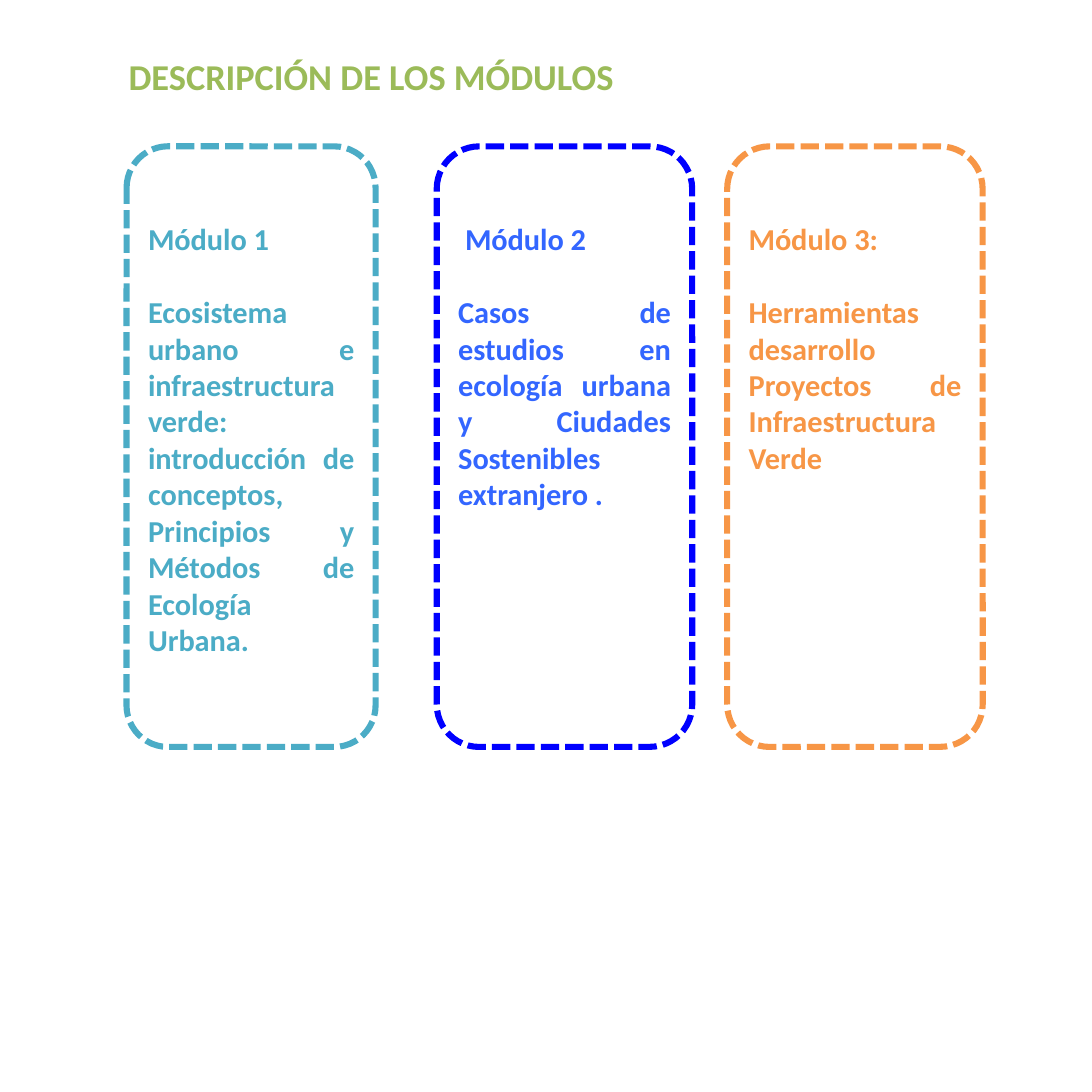
from pptx import Presentation
from pptx.dml.color import RGBColor
from pptx.enum.dml import MSO_LINE
from pptx.enum.shapes import MSO_SHAPE as Preset
from pptx.enum.text import PP_ALIGN as Align
from pptx.util import Inches, Pt


def color(value):
    return RGBColor.from_string(value)


class ModuleSlide:
    """Holds the style and the current slide."""
    font = "Calibri"
    line_width = 2

    def __init__(self, presentation):
        self.slide = presentation.slides.add_slide(presentation.slide_layouts[6])

    def frame(self, left, top, width, height, line):
        shape = self.slide.shapes.add_shape(
            Preset.ROUNDED_RECTANGLE, Inches(left), Inches(top), Inches(width), Inches(height))
        shape.shadow.inherit = False
        shape.fill.background()
        shape.line.color.rgb = color(line)
        shape.line.width = Pt(self.line_width)
        shape.line.dash_style = MSO_LINE.SQUARE_DOT

    def text(self, paragraphs, left, top, width, height, *, size, fill, wrap=True, gap=0):
        box = self.slide.shapes.add_textbox(
            Inches(left), Inches(top), Inches(width), Inches(height))
        text_frame = box.text_frame
        text_frame.word_wrap = wrap
        for index, content in enumerate(paragraphs):
            paragraph = text_frame.paragraphs[0] if index == 0 else text_frame.add_paragraph()
            paragraph.alignment = Align.JUSTIFY
            paragraph.space_before = Pt(gap if index else 0)
            run = paragraph.add_run()
            run.text = content
            run.font.name = self.font
            run.font.size = Pt(size)
            run.font.bold = True
            run.font.color.rgb = color(fill)


# Left, width, frame colour, text colour, heading, description
MODULES = [
    (0.58, 1.14, "4BACC6", "4BACC6", "Módulo 1",
     "Ecosistema urbano e infraestructura verde: introducción de conceptos, "
     "Principios y Métodos de Ecología Urbana."),
    (2, 1.17, "0000FF", "3366FF", " Módulo 2",
     "Casos de estudios en ecología urbana y Ciudades Sostenibles extranjero ."),
    (3.33, 1.17, "F79646", "F79646", "Módulo 3:",
     "Herramientas desarrollo Proyectos de Infraestructura Verde"),
]


def main():
    presentation = Presentation()
    presentation.slide_width = presentation.slide_height = Inches(5)
    page = ModuleSlide(presentation)

    # Title
    page.text(["DESCRIPCIÓN DE LOS MÓDULOS"], 0.49, 0.2, 2.45, 0.3,
              size=12, fill="9BBB59", wrap=False)

    # Module columns
    for left, width, line, fill, heading, description in MODULES:
        page.frame(left, 0.67, width, 2.75, line)
        page.text([heading, description], left, 0.96, width, 2.29,
                  size=10, fill=fill, gap=12)

    presentation.save("out.pptx")


if __name__ == "__main__":
    main()
